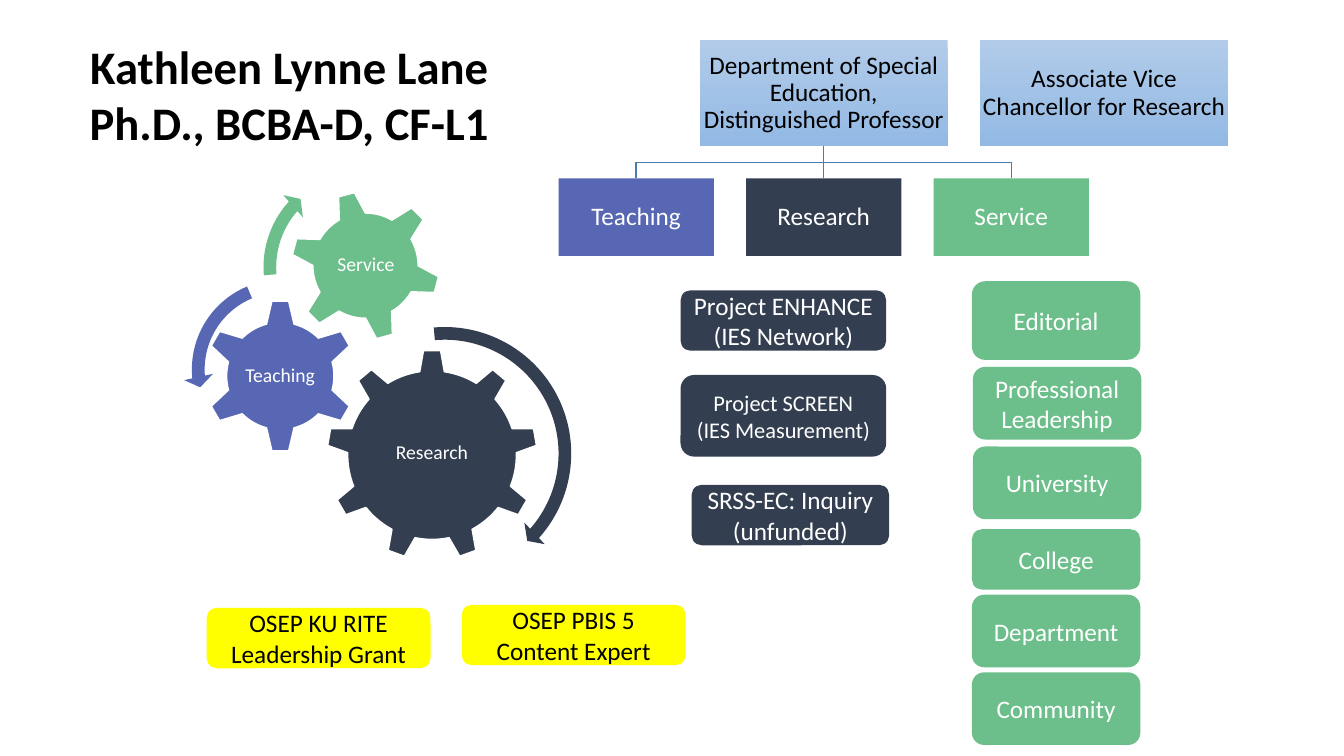
from lxml import etree
from pptx import Presentation
from pptx.dml.color import RGBColor
from pptx.enum.shapes import MSO_CONNECTOR, MSO_SHAPE
from pptx.enum.text import MSO_ANCHOR, MSO_AUTO_SIZE, PP_ALIGN
from pptx.oxml.ns import qn
from pptx.util import Pt

RECT = MSO_SHAPE.RECTANGLE
ROUND = MSO_SHAPE.ROUNDED_RECTANGLE
GEAR_SIX = MSO_SHAPE.GEAR_6
GEAR_NINE = MSO_SHAPE.GEAR_9
ARC = MSO_SHAPE.CIRCULAR_ARROW
LEFT_ARC = MSO_SHAPE.LEFT_CIRCULAR_ARROW
STRAIGHT = MSO_CONNECTOR.STRAIGHT
MIDDLE = MSO_ANCHOR.MIDDLE
CENTER = PP_ALIGN.CENTER
NO_FIT = MSO_AUTO_SIZE.NONE
PX = 9144
FONT = "Calibri"
COLORS = {
    "white": "FFFFFF", "black": "000000", "navy": "333F50", "blue": "5767B4",
    "green": "6CBF8B", "yellow": "FFFF00", "line": "497CAB",
    "sky": "B1CBE9", "deep": "93B9E4",
}


def rgb(name):
    return RGBColor.from_string(COLORS[name])


def apply(item, form):
    for key, value in form.items():
        setattr(item, key, value)


class Deck:
    """Draws styled elements on the current slide."""

    def __init__(self, wide, high):
        self.prs = Presentation()
        apply(self.prs, {"slide_width": wide * PX, "slide_height": high * PX})
        self.slide = self.prs.slides.add_slide(self.prs.slide_layouts[5])
        self.shapes = self.slide.shapes

    def label(self, shape, text, size, color, inset=None, space=1.0, bold=False):
        frame = shape.text_frame
        form = {"word_wrap": True, "auto_size": NO_FIT, "vertical_anchor": MIDDLE}
        if inset is not None:
            for side in ("left", "top", "right", "bottom"):
                form["margin_" + side] = inset * PX
        apply(frame, form)
        frame.text = text
        para = frame.paragraphs[0]
        apply(para, {"alignment": CENTER, "line_spacing": space})
        apply(para.font, {"name": FONT, "size": Pt(size), "bold": bold})
        para.font.color.rgb = rgb(color)

    def title(self, box, text, size):
        shape = self.shapes.title
        apply(shape, dict(zip(("left", "top", "width", "height"),
                              (n * PX for n in box))))
        self.label(shape, text, size, "black", bold=True)

    def shape(self, kind, box, fill, edge=None, turn=0, adjust=()):
        shape = self.shapes.add_shape(kind, *(n * PX for n in box))
        shape.shadow.inherit = False
        shape.rotation = turn
        for i, value in enumerate(adjust):
            shape.adjustments[i] = value / 1000
        if isinstance(fill, tuple):
            shape.fill.gradient()
            shape.fill.gradient_angle = 270
            for stop, name in zip(shape.fill.gradient_stops, fill):
                stop.color.rgb = rgb(name)
        else:
            shape.fill.solid()
            shape.fill.fore_color.rgb = rgb(fill)
        if edge:
            self.stroke(shape, edge)
        else:
            shape.line.fill.background()
        return shape

    def stroke(self, shape, color):
        shape.line.color.rgb = rgb(color)
        shape.line.width = Pt(1)

    def card(self, box, text, fill, size=18, color="white"):
        self.label(self.shape(ROUND, box, fill), text, size, color)

    def node(self, box, text, fill, color="white"):
        shape = self.shape(RECT, box, fill)
        self.label(shape, text, 18, color, inset=1, space=0.9)
        return shape

    def gear(self, kind, box, fill, text, spot, turn=0):
        self.shape(kind, box, fill, "white", turn)
        name = self.shapes.add_textbox(*(n * PX for n in spot))
        self.label(name, text, 14, "white", inset=2, space=0.9)

    def branch(self, points):
        pen = self.shapes.build_freeform(*points[0], scale=PX)
        pen.add_line_segments(points[1:], close=False)
        shape = pen.convert_to_shape()
        shape.shadow.inherit = False
        shape.fill.background()
        self.stroke(shape, "line")

    def link(self, start, end):
        line = self.shapes.add_connector(STRAIGHT, 0, 0, 0, 0)
        line.begin_connect(start, 2)
        line.end_connect(end, 0)
        self.stroke(line, "line")
        etree.SubElement(line._element.spPr, qn("a:effectLst"))


def main():
    deck = Deck(1333, 750)
    deck.title((40, 37, 494, 112), "Kathleen Lynne Lane Ph.D., BCBA-D, CF-L1", 33.3)

    deck.gear(GEAR_NINE, (324, 347, 209, 209), "navy", "Research",
              (366, 396, 125, 108))
    deck.gear(GEAR_SIX, (202, 297, 152, 152), "blue", "Teaching",
              (240, 336, 76, 75))
    deck.gear(GEAR_SIX, (288, 189, 149, 149), "green", "Service",
              (321, 221, 84, 84), turn=345)
    for kind, box, fill, adjust in (
        (ARC, (307, 316, 268, 268), "navy", (47, 2990, 24965, 159043, 55)),
        (LEFT_ARC, (182, 269, 195, 195), "blue", (65, 4300, 104891, 148378, 75)),
        (ARC, (253, 160, 210, 210), "green", (60, 3941, 133138, 105082, 70)),
    ):
        deck.shape(kind, box, fill, adjust=adjust)

    sky = ("sky", "deep")
    head = deck.node((694, 40, 246, 105),
                     "Department of Special Education, Distinguished Professor",
                     sky, "black")
    deck.node((972, 40, 246, 105), "Associate Vice Chancellor for Research",
              sky, "black")
    roles = [("Teaching", "blue"), ("Research", "navy"), ("Service", "green")]
    nodes = [deck.node((554 + 186 * i, 177, 154, 77), text, fill)
             for i, (text, fill) in enumerate(roles)]
    deck.link(head, nodes[1])
    for end in (631, 1003):
        deck.branch([(817, 145), (817, 161), (end, 161), (end, 177)])

    for box, text, size in (
        ((675, 288, 204, 60), "Project ENHANCE (IES Network)", 18),
        ((675, 372, 204, 81), "Project SCREEN (IES Measurement)", 16),
        ((686, 481, 196, 60), "SRSS-EC: Inquiry (unfunded)", 18),
    ):
        deck.card(box, text, "navy", size)

    for left, top, text in ((205, 603, "OSEP KU RITE Leadership Grant"),
                            (458, 600, "OSEP PBIS 5 Content Expert")):
        deck.card((left, top, 222, 60), text, "yellow", color="black")

    for left, top, high, text in (
        (964, 279, 78, "Editorial"),
        (965, 364, 72, "Professional Leadership"),
        (965, 443, 72, "University"),
        (964, 525, 60, "College"),
        (964, 590, 72, "Department"),
        (964, 667, 72, "Community"),
    ):
        deck.card((left, top, 167, high), text, "green")

    deck.prs.save("out.pptx")


if __name__ == "__main__":
    main()
